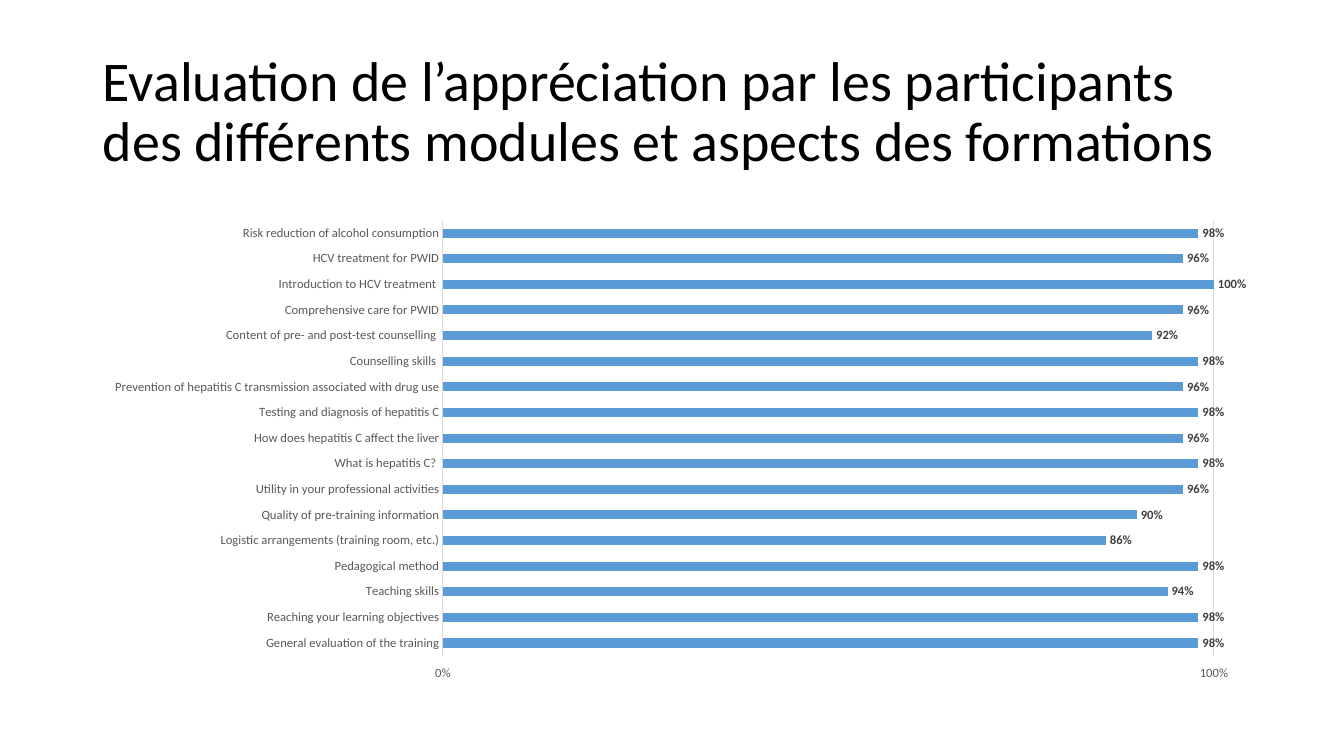
from dataclasses import dataclass

from lxml.etree import SubElement
from pptx import Presentation
from pptx.chart.data import CategoryChartData
from pptx.dml.color import RGBColor
from pptx.enum.chart import XL_CHART_TYPE, XL_LABEL_POSITION, XL_TICK_LABEL_POSITION, XL_TICK_MARK
from pptx.enum.text import MSO_ANCHOR, MSO_AUTO_SIZE, PP_ALIGN
from pptx.oxml.ns import qn
from pptx.util import Inches, Pt


@dataclass(frozen=True)
class Theme:
    font: str = "Calibri"
    title_size: float = 40
    chart_size: float = 10
    label_size: float = 9
    line_width: float = 0.75
    ink: str = "000000"
    axis_text: str = "595959"
    value_text: str = "404040"
    grid: str = "D9D9D9"
    bar: str = "5B9BD5"


THEME = Theme()

TITLE = "Evaluation de l’appréciation par les participants des différents modules et aspects des formations"

RATINGS = [
    ("General evaluation of the training", 0.98),
    ("Reaching your learning objectives", 0.98),
    ("Teaching skills", 0.94),
    ("Pedagogical method", 0.98),
    ("Logistic arrangements (training room, etc.)", 0.86),
    ("Quality of pre-training information", 0.9),
    ("Utility in your professional activities", 0.96),
    ("What is hepatitis C? ", 0.98),
    ("How does hepatitis C affect the liver", 0.96),
    ("Testing and diagnosis of hepatitis C", 0.98),
    ("Prevention of hepatitis C transmission associated with drug use", 0.96),
    ("Counselling skills ", 0.98),
    ("Content of pre- and post-test counselling ", 0.92),
    ("Comprehensive care for PWID", 0.96),
    ("Introduction to HCV treatment ", 1),
    ("HCV treatment for PWID", 0.96),
    ("Risk reduction of alcohol consumption", 0.98),
]


def format_font(font, size, color, bold=False):
    font.name = THEME.font
    font.size = Pt(size)
    font.bold = bold
    font.color.rgb = RGBColor.from_string(color)


def format_line(line):
    line.width = Pt(THEME.line_width)
    line.color.rgb = RGBColor.from_string(THEME.grid)


def write_text(frame, text, *, size, color, spacing):
    frame.word_wrap = True
    frame.auto_size = MSO_AUTO_SIZE.NONE
    frame.vertical_anchor = MSO_ANCHOR.MIDDLE
    para = frame.paragraphs[0]
    para.alignment = PP_ALIGN.LEFT
    para.line_spacing = spacing
    span = para.add_run()
    span.text = text
    format_font(span.font, size, color)


def place_title(page, text):
    title = page.shapes.title
    title.left, title.top = Inches(0.92), Inches(0.4)
    title.width, title.height = Inches(11.5), Inches(1.45)
    write_text(title.text_frame, text, size=THEME.title_size, color=THEME.ink, spacing=0.9)


def set_plot_area(chart, **fractions):
    plot_area = chart.plots[0]._element.getparent()
    layout = plot_area.find(qn("c:layout"))
    if layout is None:
        layout = SubElement(plot_area, qn("c:layout"))
        plot_area.insert(0, layout)
    manual = SubElement(layout, qn("c:manualLayout"))
    settings = {"layoutTarget": "inner", "xMode": "edge", "yMode": "edge", **fractions}
    for name, value in settings.items():
        SubElement(manual, qn(f"c:{name}")).set("val", str(value))


def format_axis(axis):
    axis.major_tick_mark = axis.minor_tick_mark = XL_TICK_MARK.NONE
    format_font(axis.tick_labels.font, THEME.label_size, THEME.axis_text)


def format_axes(chart):
    categories, values = chart.category_axis, chart.value_axis
    format_axis(categories)
    format_axis(values)
    format_line(categories.format.line)
    values.format.line.fill.background()
    values.minimum_scale, values.maximum_scale, values.major_unit = 0, 1, 1
    values.has_major_gridlines = True
    format_line(values.major_gridlines.format.line)
    values.tick_label_position = XL_TICK_LABEL_POSITION.LOW
    values.tick_labels.number_format = "0%"
    values.tick_labels.number_format_is_linked = False


def format_bars(plot):
    plot.gap_width = 182
    plot.vary_by_categories = False
    series = plot.series[0]
    series.format.fill.solid()
    series.format.fill.fore_color.rgb = RGBColor.from_string(THEME.bar)
    labels = series.data_labels
    labels.show_value = True
    labels.position = XL_LABEL_POSITION.OUTSIDE_END
    labels.number_format = "0%"
    labels.number_format_is_linked = False
    format_font(labels.font, THEME.label_size, THEME.value_text, bold=True)


def add_ratings_chart(page, ratings):
    names, values = zip(*ratings)
    data = CategoryChartData(number_format="0%")
    data.categories = names
    data.add_series("Series 1", values)
    chart = page.shapes.add_chart(
        XL_CHART_TYPE.BAR_CLUSTERED, Inches(0.92), Inches(2.09), Inches(11.5), Inches(4.76), data
    ).chart
    chart.has_title = False
    chart.has_legend = False
    format_font(chart.font, THEME.chart_size, THEME.ink)
    set_plot_area(chart, x=0.302, y=0.02, w=0.665, h=0.908)
    format_axes(chart)
    format_bars(chart.plots[0])


def main():
    deck = Presentation()
    deck.slide_width, deck.slide_height = Inches(13.33), Inches(7.5)
    page = deck.slides.add_slide(deck.slide_layouts.get_by_name("Title Only"))
    place_title(page, TITLE)
    add_ratings_chart(page, RATINGS)
    deck.save("out.pptx")


if __name__ == "__main__":
    main()
